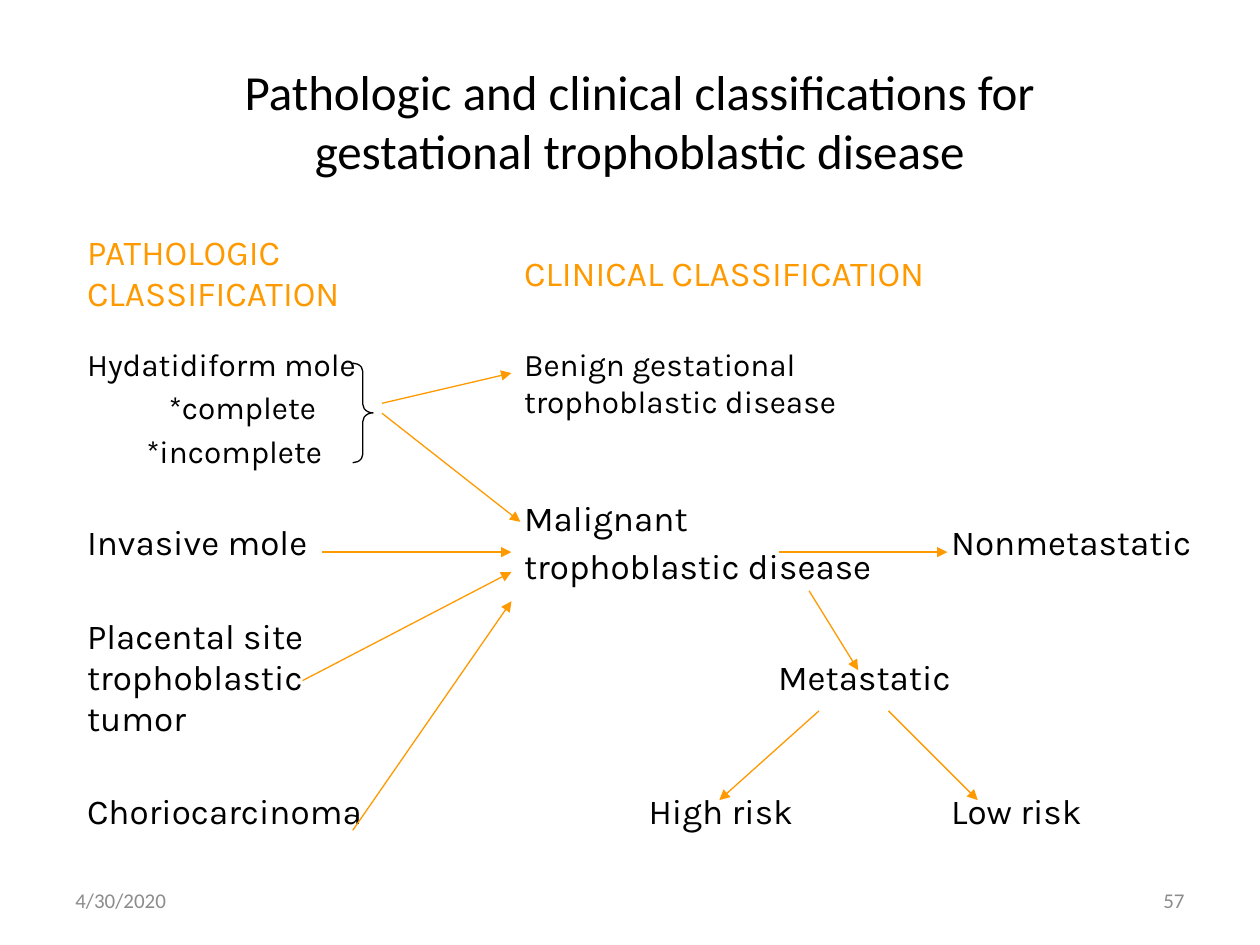
import pptx
import pptx.util
import pptx.dml.color
import pptx.enum.shapes
import pptx.enum.text
import lxml.etree
from dataclasses import dataclass
from pptx.oxml.ns import qn

Cm = pptx.util.Cm
Pt = pptx.util.Pt
ALIGN = pptx.enum.text.PP_ALIGN
ANCHOR = pptx.enum.text.MSO_ANCHOR


@dataclass(frozen=True)
class Theme:
    accent: str = "FF9900"
    ink: str = "000000"
    grey: str = "8C8C8C"
    plain: str = "Calibri"
    grid: str = "Karla"
    title: int = 28
    large: int = 20
    small: int = 18
    foot: int = 12
    line: float = 0.75


THEME = Theme()


def color(code):
    return pptx.dml.color.RGBColor.from_string(code)


def write(frame, text, size=THEME.large, font=THEME.grid, ink=THEME.ink,
          align=ALIGN.LEFT, gap=0, indents=()):
    """Fill a frame, one paragraph a line; gap is a share of the type size."""
    frame.word_wrap = True
    for i, words in enumerate(text.split("\n")):
        para = frame.paragraphs[0] if i == 0 else frame.add_paragraph()
        para.alignment = align
        para.space_before = Pt(gap * size)
        if i < len(indents):
            para._p.get_or_add_pPr().set("marL", str(Cm(indents[i])))
        run = para.add_run()
        run.text = words
        run.font.size = Pt(size)
        run.font.name = font
        run.font.bold = False
        run.font.color.rgb = color(ink)


class Page:
    def __init__(self, deck, theme):
        self.theme = theme
        self.slide = deck.slides.add_slide(deck.slide_layouts[5])
        self.shapes = self.slide.shapes

    def title(self, text, x, y, w, h):
        head = self.shapes.title
        head.left, head.top, head.width, head.height = map(Cm, (x, y, w, h))
        frame = head.text_frame
        frame.vertical_anchor = ANCHOR.TOP
        frame.auto_size = pptx.enum.text.MSO_AUTO_SIZE.NONE
        write(frame, text, size=self.theme.title, font=self.theme.plain,
              align=ALIGN.CENTER)

    def foot(self, text, x, align):
        box = self.shapes.add_textbox(Cm(x), Cm(17.65), Cm(5.93), Cm(1.01))
        box.text_frame.vertical_anchor = ANCHOR.MIDDLE
        write(box.text_frame, text, size=self.theme.foot, align=align,
              font=self.theme.plain, ink=self.theme.grey)

    def table(self, x, y, widths, height, rows):
        frame = self.shapes.add_table(rows, len(widths), Cm(x), Cm(y),
                                      Cm(sum(widths)), Cm(rows * height))
        grid = frame.table
        grid.first_row = grid.horz_banding = False
        for col, width in zip(grid.columns, widths):
            col.width = Cm(width)
        for row in grid.rows:
            row.height = Cm(height)
            for cell in row.cells:
                cell.fill.background()
        return grid

    def cell(self, grid, row, col, text, anchor=ANCHOR.MIDDLE, **style):
        cell = grid.cell(row, col)
        cell.vertical_anchor = anchor
        write(cell.text_frame, text, gap=0.2, **style)

    def brace(self, x, y, w, h):
        kind = pptx.enum.shapes.MSO_SHAPE.RIGHT_BRACE
        brace = self.shapes.add_shape(kind, Cm(x), Cm(y), Cm(w), Cm(h))
        brace.adjustments[0] = 0.42
        brace.shadow.inherit = False
        brace.fill.background()
        brace.line.color.rgb = color(self.theme.ink)
        brace.line.width = Pt(self.theme.line)

    def arrow(self, *ends):
        kind = pptx.enum.shapes.MSO_CONNECTOR.STRAIGHT
        arrow = self.shapes.add_connector(kind, *map(Cm, ends))
        arrow.line.color.rgb = color(self.theme.accent)
        arrow.line.width = Pt(self.theme.line)
        lxml.etree.SubElement(arrow.line._get_or_add_ln(), qn("a:tailEnd"),
                              type="triangle")
        lxml.etree.SubElement(arrow._element.spPr, qn("a:effectLst"))


def main():
    deck = pptx.Presentation()
    deck.slide_width, deck.slide_height = Cm(25.4), Cm(19.05)
    page = Page(deck, THEME)

    # Title
    page.title("Pathologic and clinical classifications for "
               "gestational trophoblastic disease", 4.5, 1.12, 16.79, 2.62)

    # Table: pathologic classes on the left, clinical ones on the right
    grid = page.table(1.5, 4.19, (6.4, 2.41, 8.61, 5.79), 2.69, rows=5)
    grid.cell(3, 2).merge(grid.cell(3, 3))
    head = dict(ink=THEME.accent)
    mole = dict(size=THEME.small, anchor=ANCHOR.TOP)
    mid = dict(align=ALIGN.CENTER)
    cells = (
        (0, 0, "PATHOLOGIC CLASSIFICATION", head),
        (0, 2, "CLINICAL CLASSIFICATION", head),
        (1, 0, "Hydatidiform mole\n*complete\n*incomplete",
         dict(mole, indents=(0, 1.65, 1.2))),
        (1, 2, "Benign gestational trophoblastic disease", mole),
        (2, 0, "Invasive mole", {}),
        (2, 2, "Malignant\ntrophoblastic disease", {}),
        (2, 3, "Nonmetastatic", {}),
        (3, 0, "Placental site trophoblastic tumor", {}),
        (3, 2, "Metastatic ", mid),
        (4, 0, "Choriocarcinoma", {}),
        (4, 2, "High risk ", mid),
        (4, 3, "Low risk", {}),
    )
    for row, col, text, style in cells:
        page.cell(grid, row, col, text, **style)

    # Brace around the mole types
    page.brace(7.11, 7.32, 0.41, 2.01)

    # Arrows from each class to its outcome
    for ends in (
        (7.7, 8.13, 10.31, 7.52),
        (7.7, 8.33, 10.49, 10.52),
        (6.5, 11.13, 10.31, 11.13),
        (6.1, 13.72, 10.31, 11.53),
        (7.11, 16.74, 10.31, 12.12),
        (15.7, 11.13, 19.1, 11.13),
        (16.31, 11.91, 17.3, 13.51),
        (16.51, 14.33, 14.5, 16.13),
        (17.91, 14.33, 19.71, 16.13),
    ):
        page.arrow(*ends)

    # Date and page number
    page.foot("4/30/2020", 1.27, ALIGN.LEFT)
    page.foot("57", 18.2, ALIGN.RIGHT)

    deck.save("out.pptx")


if __name__ == "__main__":
    main()
